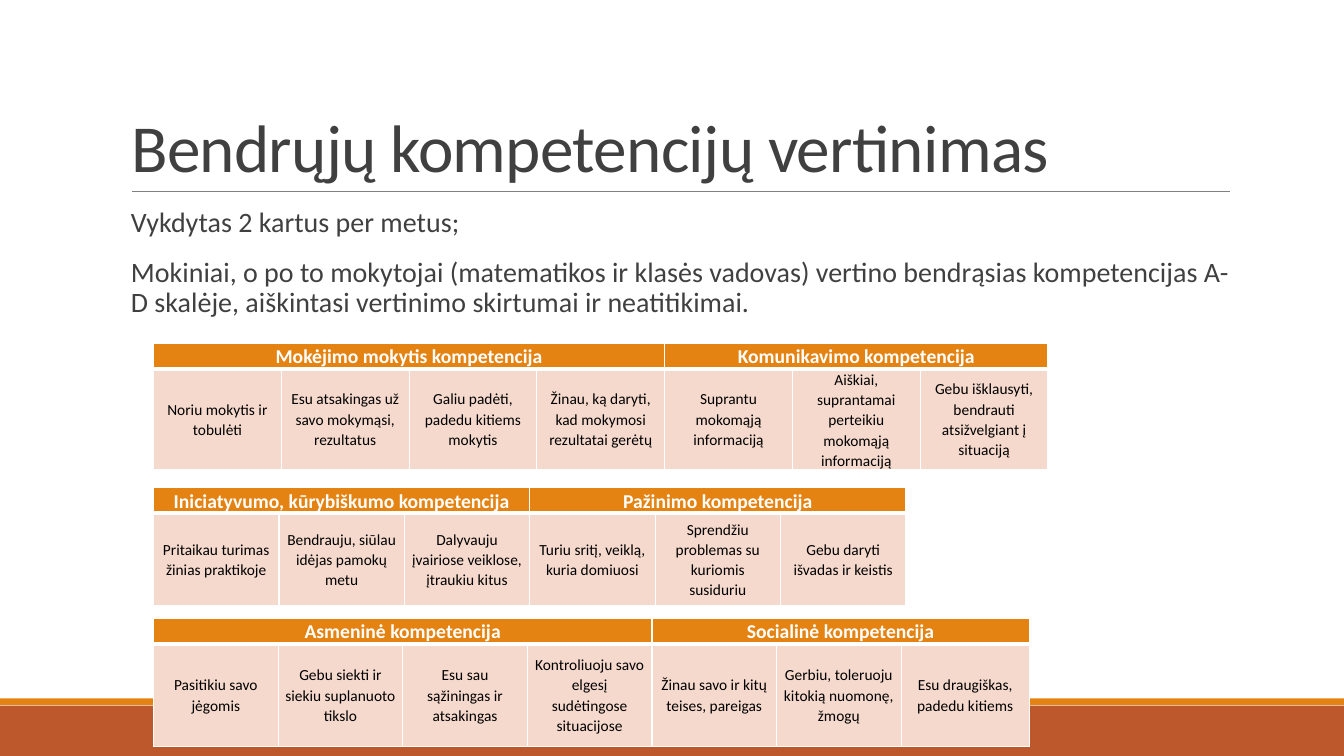
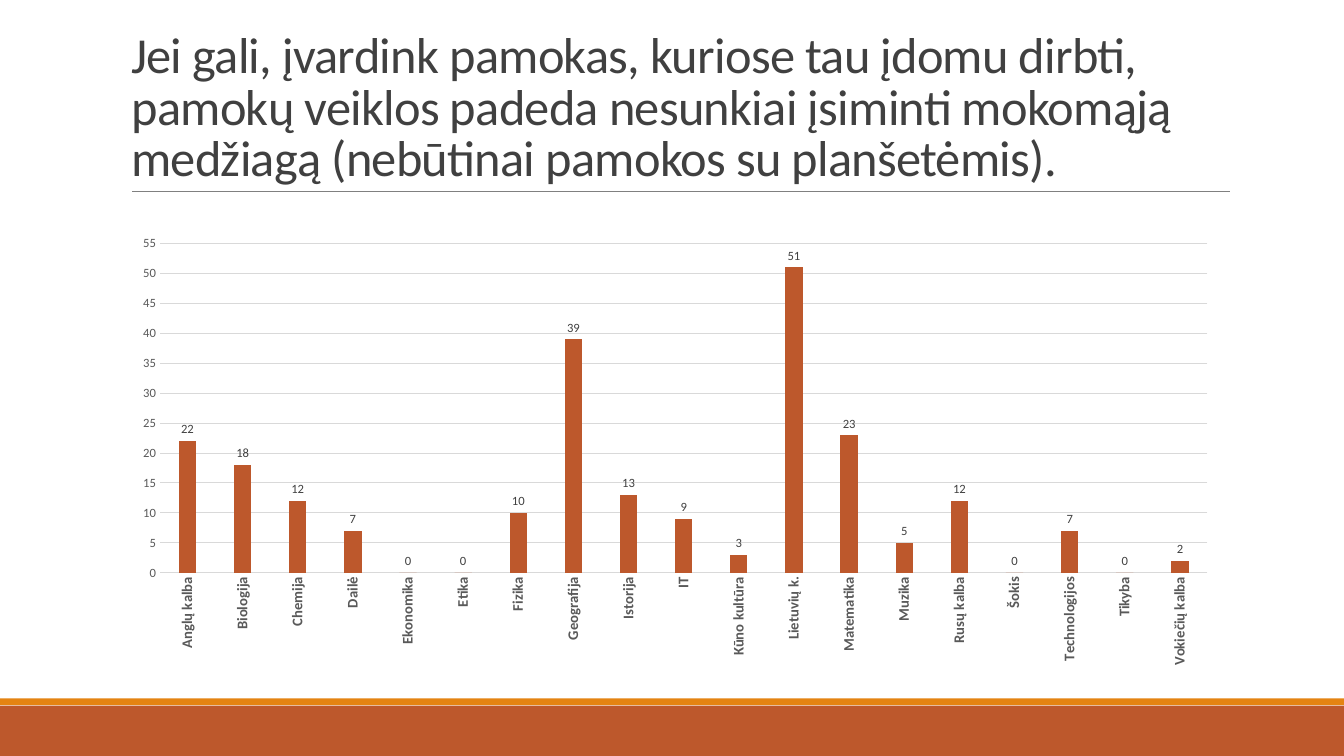
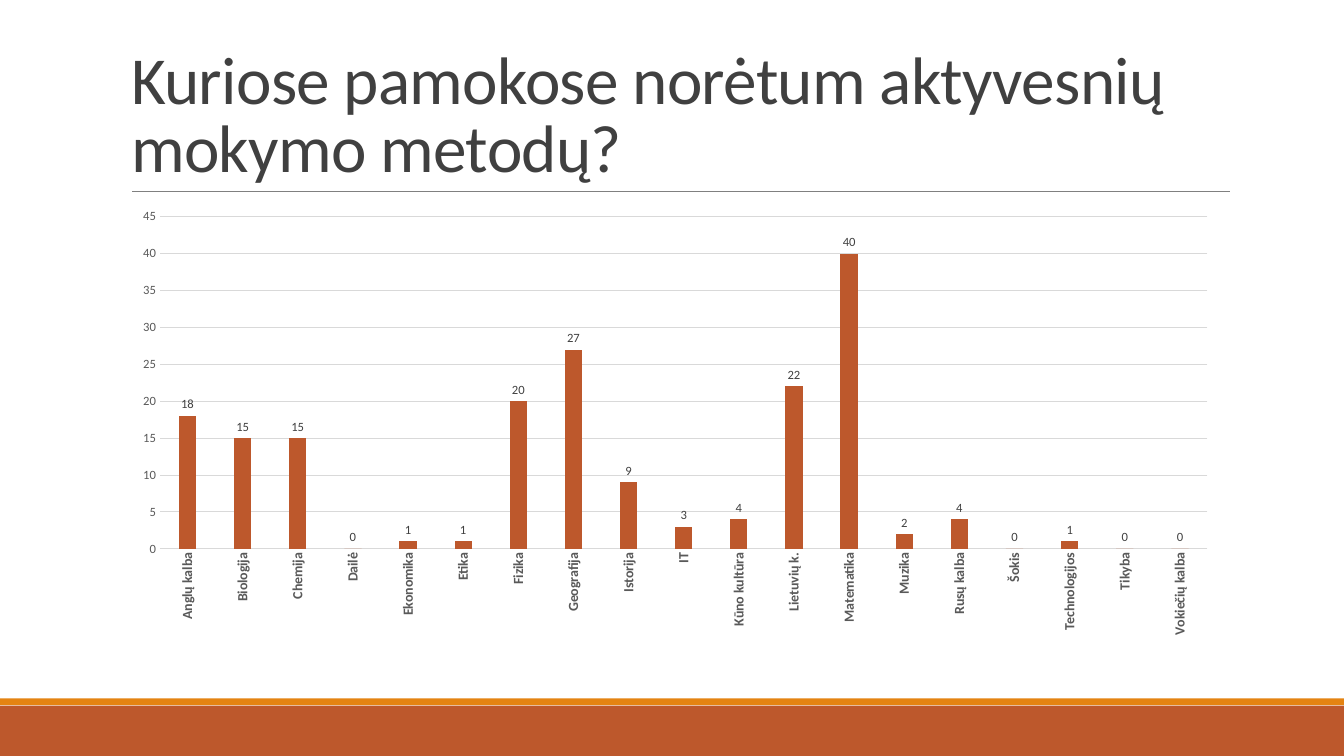
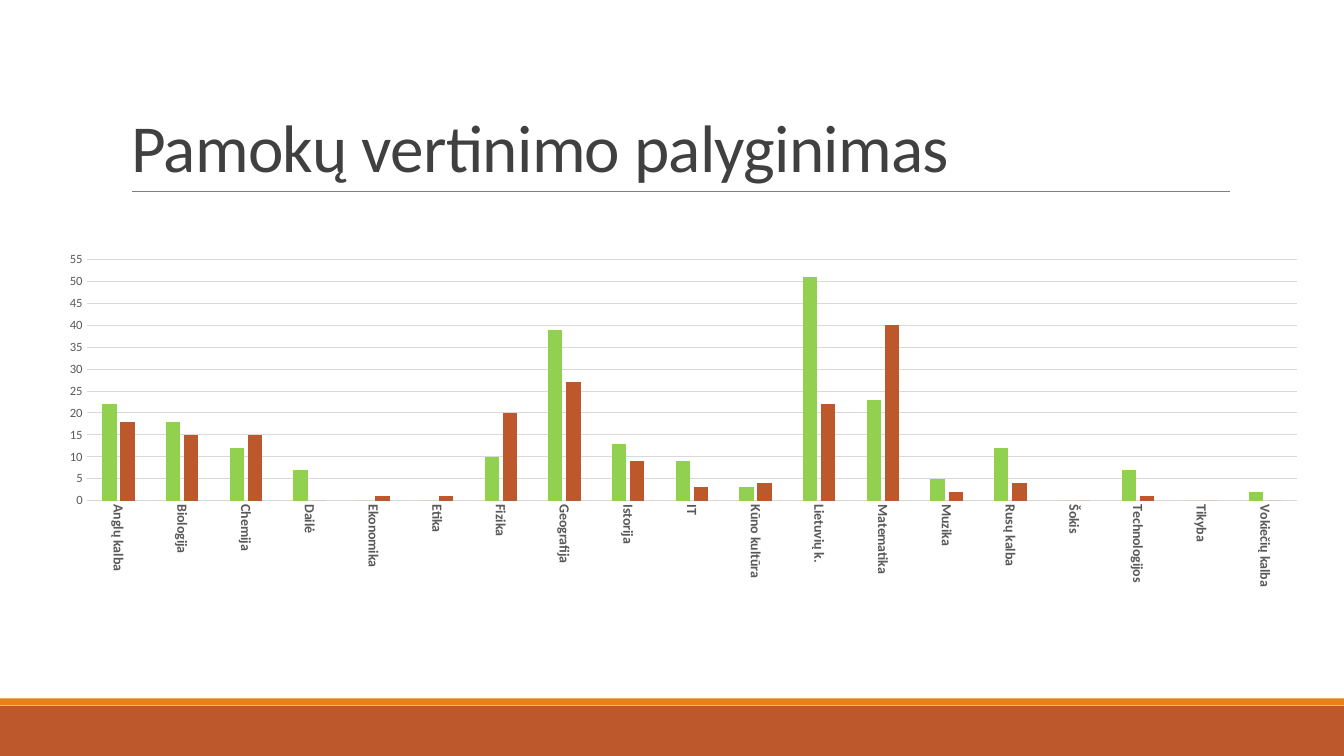
from lxml import etree
from pptx import Presentation
from pptx import util as u
from pptx.chart import data as cd
from pptx.dml import color as dml
from pptx.enum import chart as ch, shapes, text
from pptx.oxml import ns

Cm, Pt = u.Cm, u.Pt
rgb = dml.RGBColor.from_string
FONT = "Calibri"
RUST, ORANGE, GREEN = "BD582C", "E48312", "92D050"
PINK, WHITE, BLACK = "F5D9CC", "FFFFFF", "000000"
DARK, MID, RULE, GRID = "404040", "595959", "808080", "D9D9D9"


def style_font(font, size, color, bold=False):
    font.name = FONT
    font.size = Pt(size)
    font.bold = bold
    font.color.rgb = rgb(color)


def add_border(cell, side, width):
    ln = etree.SubElement(cell._tc.get_or_add_tcPr(), ns.qn(f"a:ln{side}"), w=str(Pt(width)))
    fill = etree.SubElement(ln, ns.qn("a:solidFill"))
    etree.SubElement(fill, ns.qn("a:srgbClr"), val=WHITE)


prs = Presentation()
prs.slide_width, prs.slide_height = Cm(33.87), Cm(19.05)

titles = [
    ("Bendrųjų kompetencijų vertinimas", 48),
    ("Jei gali, įvardink pamokas, kuriose tau įdomu dirbti, pamokų veiklos padeda "
     "nesunkiai įsiminti mokomąją medžiagą (nebūtinai pamokos su planšetėmis).", 36),
    ("Kuriose pamokose norėtum aktyvesnių mokymo metodų?", 48),
    ("Pamokų vertinimo palyginimas", 48),
]
for title, size in titles:
    s = prs.slides.add_slide(prs.slide_layouts[6])
    for top, height, color in [(17.78, 1.27, RUST), (17.6, 0.17, ORANGE)]:
        sp = s.shapes.add_shape(shapes.MSO_SHAPE.RECTANGLE, 0, Cm(top), prs.slide_width, Cm(height))
        sp.shadow.inherit = False
        sp.fill.solid()
        sp.fill.fore_color.rgb = rgb(color)
        sp.line.fill.background()
    rule = s.shapes.add_connector(shapes.MSO_CONNECTOR.STRAIGHT, Cm(3.33), Cm(4.83), Cm(31), Cm(4.83))
    rule.line.color.rgb = rgb(RULE)
    rule.line.width = Pt(0.5)
    etree.SubElement(rule._element.spPr, ns.qn("a:effectLst"))
    tf = s.shapes.add_textbox(Cm(3.06), Cm(0.79), Cm(27.94), Cm(4.04)).text_frame
    tf.word_wrap = True
    tf.vertical_anchor = text.MSO_ANCHOR.BOTTOM
    p = tf.paragraphs[0]
    p.line_spacing = 0.85
    style_font(p.font, size, DARK)
    r = p.add_run()
    r.text = title
    r._r.get_or_add_rPr().set("spc", "-50")

s = prs.slides[0]
tf = s.shapes.add_textbox(Cm(3.05), Cm(5.13), Cm(27.94), Cm(11.18)).text_frame
tf.word_wrap = True
tf.margin_left, tf.margin_right = Cm(0.25), 0
tf.text = (
    "Vykdytas 2 kartus per metus;\n"
    "Mokiniai, o po to mokytojai (matematikos ir klasės vadovas) vertino bendrąsias "
    "kompetencijas A-D skalėje, aiškintasi vertinimo skirtumai ir neatitikimai."
)
for p in tf.paragraphs:
    p.line_spacing = 0.9
    p.space_before, p.space_after = Pt(12), Pt(2)
    style_font(p.font, 20, DARK)

tables = [
    (8.66, 3.22, 3.22, 2.53, [
        ("Mokėjimo mokytis kompetencija", [
            "Noriu mokytis ir tobulėti",
            "Esu atsakingas už savo mokymąsi, rezultatus",
            "Galiu padėti, padedu kitiems mokytis",
            "Žinau, ką daryti, kad mokymosi rezultatai gerėtų"]),
        ("Komunikavimo kompetencija", [
            "Suprantu mokomąją informaciją",
            "Aiškiai, suprantamai perteikiu mokomąją informaciją",
            "Gebu išklausyti, bendrauti atsižvelgiant į situaciją"])]),
    (12.29, 3.16, 3.16, 2.34, [
        ("Iniciatyvumo, kūrybiškumo kompetencija", [
            "Pritaikau turimas žinias praktikoje",
            "Bendrauju, siūlau idėjas pamokų metu",
            "Dalyvauju įvairiose veiklose, įtraukiu kitus"]),
        ("Pažinimo kompetencija", [
            "Turiu sritį, veiklą, kuria domiuosi",
            "Sprendžiu problemas su kuriomis susiduriu",
            "Gebu daryti išvadas ir keistis"])]),
    (15.58, 3.14, 3.23, 2.59, [
        ("Asmeninė kompetencija", [
            "Pasitikiu savo jėgomis",
            "Gebu siekti ir siekiu suplanuoto tikslo",
            "Esu sau sąžiningas ir atsakingas",
            "Kontroliuoju savo elgesį sudėtingose situacijose"]),
        ("Socialinė kompetencija", [
            "Žinau savo ir kitų teises, pareigas",
            "Gerbiu, toleruoju kitokią nuomonę, žmogų",
            "Esu draugiškas, padedu kitiems"])]),
]
HEADER_HEIGHT = 0.64
for top, col_width, last_width, body_height, groups in tables:
    cols = sum(len(skills) for _, skills in groups)
    width = col_width * (cols - 1) + last_width
    tbl = s.shapes.add_table(2, cols, Cm(3.87), Cm(top), Cm(width), Cm(HEADER_HEIGHT + body_height)).table
    for column in tbl.columns:
        column.width = Cm(col_width)
    tbl.columns[cols - 1].width = Cm(last_width)
    tbl.rows[0].height, tbl.rows[1].height = Cm(HEADER_HEIGHT), Cm(body_height)
    col = 0
    for heading, skills in groups:
        tbl.cell(0, col).merge(tbl.cell(0, col + len(skills) - 1))
        tbl.cell(0, col).text = heading
        for skill in skills:
            tbl.cell(1, col).text = skill
            col += 1
    for i, cell in enumerate(tbl.iter_cells()):
        header = i < cols
        for side in "LRTB":
            add_border(cell, side, 3 if side == ("B" if header else "T") else 1)
        cell.fill.solid()
        cell.fill.fore_color.rgb = rgb(ORANGE if header else PINK)
        cell.margin_left = cell.margin_right = Cm(0.18)
        cell.margin_top = cell.margin_bottom = 0
        cell.vertical_anchor = text.MSO_ANCHOR.BOTTOM if header else text.MSO_ANCHOR.MIDDLE
        p = cell.text_frame.paragraphs[0]
        p.alignment = text.PP_ALIGN.CENTER
        p.line_spacing = 1.07
        style_font(p.font, 14 if header else 11, WHITE if header else BLACK, header)

subjects = [
    "Anglų kalba", "Biologija", "Chemija", "Dailė", "Ekonomika", "Etika", "Fizika",
    "Geografija", "Istorija", "IT", "Kūno kultūra", "Lietuvių k.", "Matematika",
    "Muzika", "Rusų kalba", "Šokis", "Technologijos", "Tikyba", "Vokiečių kalba",
]
interesting = [22, 18, 12, 7, 0, 0, 10, 39, 13, 9, 3, 51, 23, 5, 12, 0, 7, 0, 2]
more_active = [18, 15, 15, 0, 1, 1, 20, 27, 9, 3, 4, 22, 40, 2, 4, 0, 1, 0, 0]
charts = [
    ((3.05, 5.79, 27.94, 11.28), 55, 10.5, -90, [(interesting, RUST)]),
    ((3.05, 5.13, 27.94, 11.18), 45, 10, -90, [(more_active, RUST)]),
    ((1.22, 6.15, 32.11, 9.8), 55, 10, 90, [(interesting, GREEN), (more_active, RUST)]),
]
for number, (box, top_value, cat_size, angle, series) in enumerate(charts, 1):
    data = cd.CategoryChartData()
    data.categories = subjects
    for i, (values, _) in enumerate(series, 1):
        data.add_series(f"Series {i}", values)
    chart = prs.slides[number].shapes.add_chart(
        ch.XL_CHART_TYPE.COLUMN_CLUSTERED, *[Cm(v) for v in box], data).chart
    chart.has_title = chart.has_legend = False
    style_font(chart.font, 10, BLACK)

    cat, val = chart.category_axis, chart.value_axis
    for axis in (cat, val):
        axis.major_tick_mark = axis.minor_tick_mark = ch.XL_TICK_MARK.NONE
    style_font(cat.tick_labels.font, cat_size, MID, True)
    style_font(val.tick_labels.font, 9, MID)
    body = cat._element.txPr.find(ns.qn("a:bodyPr"))
    body.set("rot", str(angle * 60000))
    body.set("vert", "horz")
    val.minimum_scale, val.maximum_scale, val.major_unit = 0, top_value, 5
    val.format.line.fill.background()
    for line in (cat.format.line, val.major_gridlines.format.line):
        line.color.rgb = rgb(GRID)
        line.width = Pt(0.75)

    plot = chart.plots[0]
    plot.gap_width, plot.overlap = 219, -27
    plot.vary_by_categories = False
    for ser, (_, color) in zip(plot.series, series):
        ser.format.fill.solid()
        ser.format.fill.fore_color.rgb = rgb(color)
    if len(series) == 1:
        plot.has_data_labels = True
        labels = plot.data_labels
        labels.show_value = True
        labels.position = ch.XL_LABEL_POSITION.OUTSIDE_END
        style_font(labels.font, 9, DARK)

area = chart._chartSpace.chart.plotArea
for old in area.findall(ns.qn("c:layout")):
    area.remove(old)
layout = etree.Element(ns.qn("c:layout"))
area.insert(0, layout)
manual = etree.SubElement(layout, ns.qn("c:manualLayout"))
for tag, value in [("layoutTarget", "inner"), ("xMode", "edge"), ("yMode", "edge"),
                   ("x", "0.03"), ("y", "0.04"), ("w", "0.95"), ("h", "0.62")]:
    etree.SubElement(manual, ns.qn(f"c:{tag}"), val=value)

prs.save("out.pptx")
